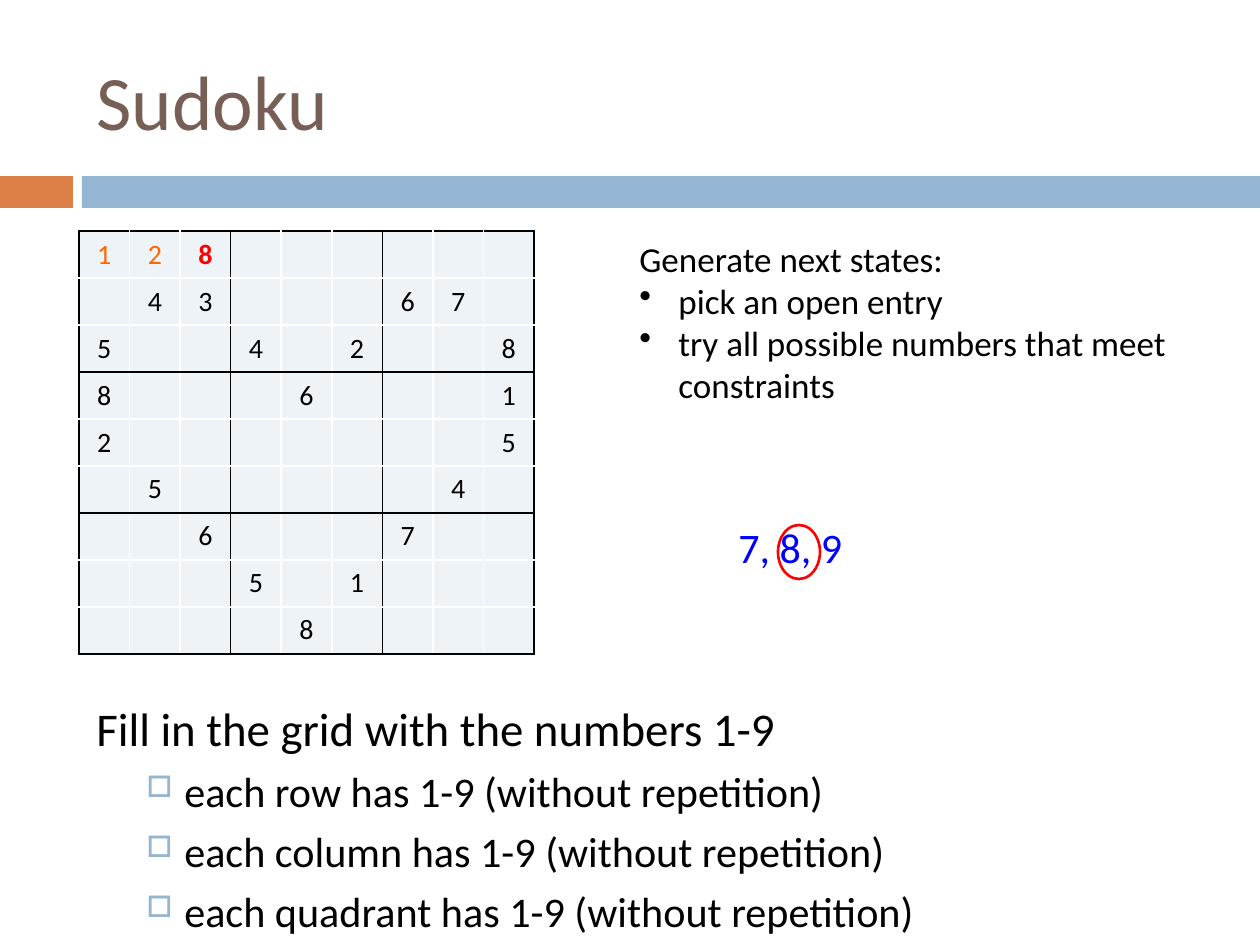
from lxml import etree
from pptx import Presentation, util as u
from pptx.dml.color import RGBColor
from pptx.enum import shapes, text
from pptx.oxml import ns

PX = 914400 / 126
FONT = "Calibri"
COLORS = {
    "orange": "DD8047", "blue": "94B6D2", "title": "775F55", "cell": "EEF3F7",
    "black": "000000", "white": "FFFFFF", "tried": "FF6600", "red": "FF0000",
    "choice": "0000FF",
}

PUZZLE = [
    "128......",
    ".43...67.",
    "5..4.2..8",
    "8...6...1",
    "2.......5",
    ".5.....4.",
    "..6...7..",
    "...5.1...",
    "....8....",
]
GUESSES = {(0, 0): ("tried", False), (0, 1): ("tried", False), (0, 2): ("red", True)}
GRID_BOX = (79, 231, 455, 423)

BANDS = [((0, 176, 73, 32), "orange"), ((82, 176, 1178, 32), "blue")]

# Paragraphs: wording, size in pt, space before in pt, bullet style
SQUARE = {"char": "□", "level": 1, "left": 88, "hang": 38, "color": "blue", "percent": 70}
DOT = {"char": "•", "level": 0, "left": 39, "hang": 39, "color": "black", "percent": 100}
TITLE = [("Sudoku", 44, 0, None)]
RULES = [("Fill in the grid with the numbers 1-9", 26.8, 7, None)] + [
    (f"each {unit} has 1-9 (without repetition)", 24.1, 5.5, SQUARE)
    for unit in ("row", "column", "quadrant")]
STEPS = [
    ("Generate next states:", 20, 0, None),
    ("pick an open entry", 20, 0, DOT),
    ("try all possible numbers that meet constraints", 20, 0, DOT),
]
CHOICES = [("7, 8, 9", 24, 0, None)]


def px(*lengths):
    return [u.Emu(round(length * PX)) for length in lengths]


def rgb(name):
    return RGBColor.from_string(COLORS[name])


def add_child(parent, tag, **attributes):
    return etree.SubElement(parent, ns.qn(f"a:{tag}"), attributes)


def style(paragraph, size, color, bold=False):
    for run in paragraph.runs:
        run.font.name, run.font.size, run.font.bold = FONT, u.Pt(size), bold
        run.font.color.rgb = rgb(color)


def add_bullet(paragraph, bullet):
    paragraph.level = bullet["level"]
    properties = paragraph._p.get_or_add_pPr()
    left, hang = px(bullet["left"], bullet["hang"])
    properties.set("marL", str(left))
    properties.set("indent", str(-hang))
    add_child(add_child(properties, "buClr"), "srgbClr", val=COLORS[bullet["color"]])
    add_child(properties, "buSzPct", val=str(bullet["percent"] * 1000))
    add_child(properties, "buChar", char=bullet["char"])


def add_text(slide, box, paragraphs, color="black", anchor=text.MSO_ANCHOR.TOP, wrap=True):
    frame = slide.shapes.add_textbox(*px(*box)).text_frame
    frame.word_wrap, frame.vertical_anchor = wrap, anchor
    frame.text = "\n".join(wording for wording, *_ in paragraphs)
    for paragraph, (_, size, before, bullet) in zip(frame.paragraphs, paragraphs):
        paragraph.space_before = u.Pt(before)
        style(paragraph, size, color)
        if bullet:
            add_bullet(paragraph, bullet)


def add_borders(cell, row, column):
    """Draw black lines around each 3 by 3 quadrant and white lines inside it."""
    properties = cell._tc.get_or_add_tcPr()
    edges = {"lnL": column, "lnR": column + 1, "lnT": row, "lnB": row + 1}
    for tag, index in edges.items():
        line = add_child(properties, tag, w=str(u.Pt(1)))
        color = COLORS["white" if index % 3 else "black"]
        add_child(add_child(line, "solidFill"), "srgbClr", val=color)


def add_puzzle(slide):
    count = len(PUZZLE)
    frame = slide.shapes.add_table(count, count, *px(*GRID_BOX))
    table = frame.table
    width, height = px(GRID_BOX[2] / count, GRID_BOX[3] / count)
    for row, digits in enumerate(PUZZLE):
        table.rows[row].height = height
        table.columns[row].width = width
        for column, digit in enumerate(digits):
            cell = table.cell(row, column)
            add_borders(cell, row, column)
            cell.fill.solid()
            cell.fill.fore_color.rgb = rgb("cell")
            cell.margin_top = cell.margin_bottom = 0
            cell.vertical_anchor = text.MSO_ANCHOR.MIDDLE
            if digit != ".":
                cell.text_frame.text = digit
                paragraph = cell.text_frame.paragraphs[0]
                paragraph.alignment = text.PP_ALIGN.CENTER
                style(paragraph, 16, *GUESSES.get((row, column), ("black", False)))


def main():
    deck = Presentation()
    deck.slide_width, deck.slide_height = px(1260, 945)
    slide = deck.slides.add_slide(deck.slide_layouts[6])

    for box, color in BANDS:
        band = slide.shapes.add_shape(shapes.MSO_SHAPE.RECTANGLE, *px(*box))
        band.shadow.inherit = False
        band.fill.solid()
        band.fill.fore_color.rgb = rgb(color)
        band.line.fill.background()

    add_text(slide, (84, 32, 1124, 136), TITLE, "title", text.MSO_ANCHOR.MIDDLE)
    add_puzzle(slide)
    add_text(slide, (84, 693, 1124, 220), RULES)
    add_text(slide, (627, 231, 612, 224), STEPS)
    add_text(slide, (726, 515, 137, 63), CHOICES, "choice", wrap=False)

    picked = slide.shapes.add_shape(shapes.MSO_SHAPE.OVAL, *px(778, 525, 42, 54))
    picked.shadow.inherit = False
    picked.fill.background()
    picked.line.color.rgb = rgb("red")
    picked.line.width = u.Pt(1.5)

    deck.save("out.pptx")


if __name__ == "__main__":
    main()
